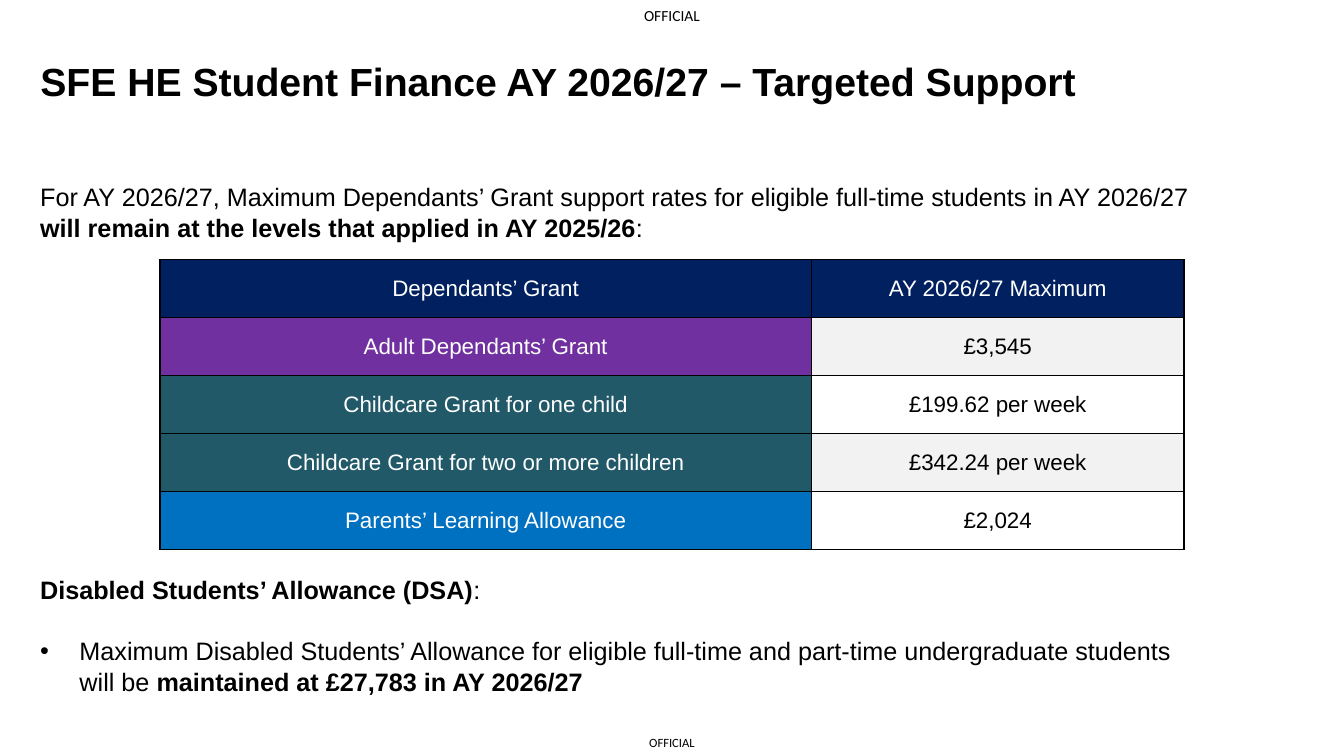
from lxml import etree
from pptx import Presentation
from pptx.dml.color import RGBColor
from pptx.enum.text import MSO_ANCHOR, PP_ALIGN
from pptx.oxml.ns import qn
from pptx.util import Pt

LEFT, CENTER = PP_ALIGN.LEFT, PP_ALIGN.CENTER
TOP, MIDDLE = MSO_ANCHOR.TOP, MSO_ANCHOR.MIDDLE
TITLE_ONLY = 5
WIDE, HIGH = 960, 540
LINE = 21.8
INDENT = 28.1

COLORS = {
    "black": "000000",
    "white": "FFFFFF",
    "navy": "002060",
    "purple": "7030A0",
    "teal": "215968",
    "blue": "0070C0",
    "grey": "F2F2F2",
}

GRANTS = [
    ("Dependants’ Grant", "AY 2026/27 Maximum", "navy"),
    ("Adult Dependants’ Grant", "£3,545", "purple"),
    ("Childcare Grant for one child", "£199.62 per week", "teal"),
    ("Childcare Grant for two or more children", "£342.24 per week", "teal"),
    ("Parents’ Learning Allowance", "£2,024", "blue"),
]


def color(name):
    return RGBColor.from_string(COLORS[name])


def apply(target, values):
    for name, value in values.items():
        setattr(target, name, value)


def write(para, text, size, face="Arial", bold=False, ink="black"):
    run = para.add_run()
    run.text = text
    apply(run.font, {"name": face, "size": Pt(size), "bold": bold})
    run.font.color.rgb = color(ink)


def add_box(slide, box, anchor=TOP):
    frame = slide.shapes.add_textbox(*map(Pt, box)).text_frame
    apply(frame, {"word_wrap": True, "vertical_anchor": anchor})
    return frame


def add_mark(slide, box, size):
    frame = add_box(slide, box, MIDDLE)
    apply(frame, dict.fromkeys(
        ("margin_left", "margin_top", "margin_right", "margin_bottom"), 0))
    para = frame.paragraphs[0]
    para.alignment = CENTER
    write(para, "OFFICIAL", size, "Calibri")


def add_title(slide, box, text):
    title = slide.shapes.title
    apply(title, dict(zip(("left", "top", "width", "height"), map(Pt, box))))
    apply(title.text_frame, {"vertical_anchor": MIDDLE, "word_wrap": True})
    para = title.text_frame.paragraphs[0]
    apply(para, {"alignment": LEFT, "line_spacing": 0.9})
    write(para, text, 28, bold=True)


def add_bullet(para):
    props = para._p.get_or_add_pPr()
    props.set("marL", str(Pt(INDENT)))
    props.set("indent", str(-Pt(INDENT)))
    etree.SubElement(props, qn("a:buFont"), typeface="Arial")
    etree.SubElement(props, qn("a:buChar"), char="•")


def add_body(slide, box, paras, gap=0, bullet=False):
    frame = add_box(slide, box)
    for i, runs in enumerate(paras):
        para = frame.add_paragraph() if i else frame.paragraphs[0]
        if i and bullet:
            add_bullet(para)
        apply(para, {"alignment": LEFT, "line_spacing": Pt(LINE),
                     "space_before": Pt(gap if i else 0)})
        for text, bold in runs:
            write(para, text, 18, bold=bold)


def add_edges(cell):
    props = cell._tc.get_or_add_tcPr()
    for i, side in enumerate(("lnL", "lnR", "lnT", "lnB")):
        edge = etree.Element(qn("a:" + side), w=str(Pt(1)))
        fill = etree.SubElement(edge, qn("a:solidFill"))
        etree.SubElement(fill, qn("a:srgbClr"), val=COLORS["black"])
        props.insert(i, edge)


def fill_cell(cell, text, back, ink):
    cell.fill.solid()
    cell.fill.fore_color.rgb = color(back)
    cell.vertical_anchor = MIDDLE
    para = cell.text_frame.paragraphs[0]
    para.alignment = CENTER
    write(para, text, 16, ink=ink)
    add_edges(cell)


def add_grants(slide, box, split):
    table = slide.shapes.add_table(len(GRANTS), 2, *map(Pt, box)).table
    for col, width in zip(table.columns, (split, box[2] - split)):
        col.width = Pt(width)
    for i, (grant, rate, back) in enumerate(GRANTS):
        table.rows[i].height = Pt(box[3] / len(GRANTS))
        fill_cell(table.cell(i, 0), grant, back, "white")
        if i:
            fill_cell(table.cell(i, 1), rate, "grey" if i % 2 else "white", "black")
        else:
            fill_cell(table.cell(i, 1), rate, back, "white")


def add_support(deck, box):
    slide = deck.slides.add_slide(deck.slide_layouts[TITLE_ONLY])
    left, top, width, height = box
    mid = left + width / 2
    edge = left + 21.6
    add_mark(slide, (mid - 31.5, top, 63, 22.3), 11)
    add_mark(slide, (mid - 26.5, top + height - 19.4, 53, 19.4), 9)
    add_title(slide, (edge, top + 34.6, 828, 51),
              "SFE HE Student Finance AY 2026/27 – Targeted Support")
    add_body(slide, (edge, top + 126, 841, 51), [
        [("For AY 2026/27, Maximum Dependants’ Grant support rates for "
          "eligible full-time students in AY 2026/27", False)],
        [("will remain at the levels that applied in AY 2025/26", True),
         (":", False)],
    ])
    add_grants(slide, (left + 114.3, top + 185.3, 731.5, 207.2), 465.2)
    add_body(slide, (edge, top + 406.5, 841, 95), [
        [("Disabled Students’ Allowance (DSA)", True), (":", False)],
        [("Maximum Disabled Students’ Allowance for eligible full-time and "
          "part-time undergraduate students will be ", False),
         ("maintained at £27,783 in AY 2026/27", True)],
    ], LINE, True)


def main():
    deck = Presentation()
    apply(deck, {"slide_width": Pt(WIDE), "slide_height": Pt(HIGH)})
    add_support(deck, (0, 0, WIDE, HIGH))
    deck.save("out.pptx")


if __name__ == "__main__":
    main()
